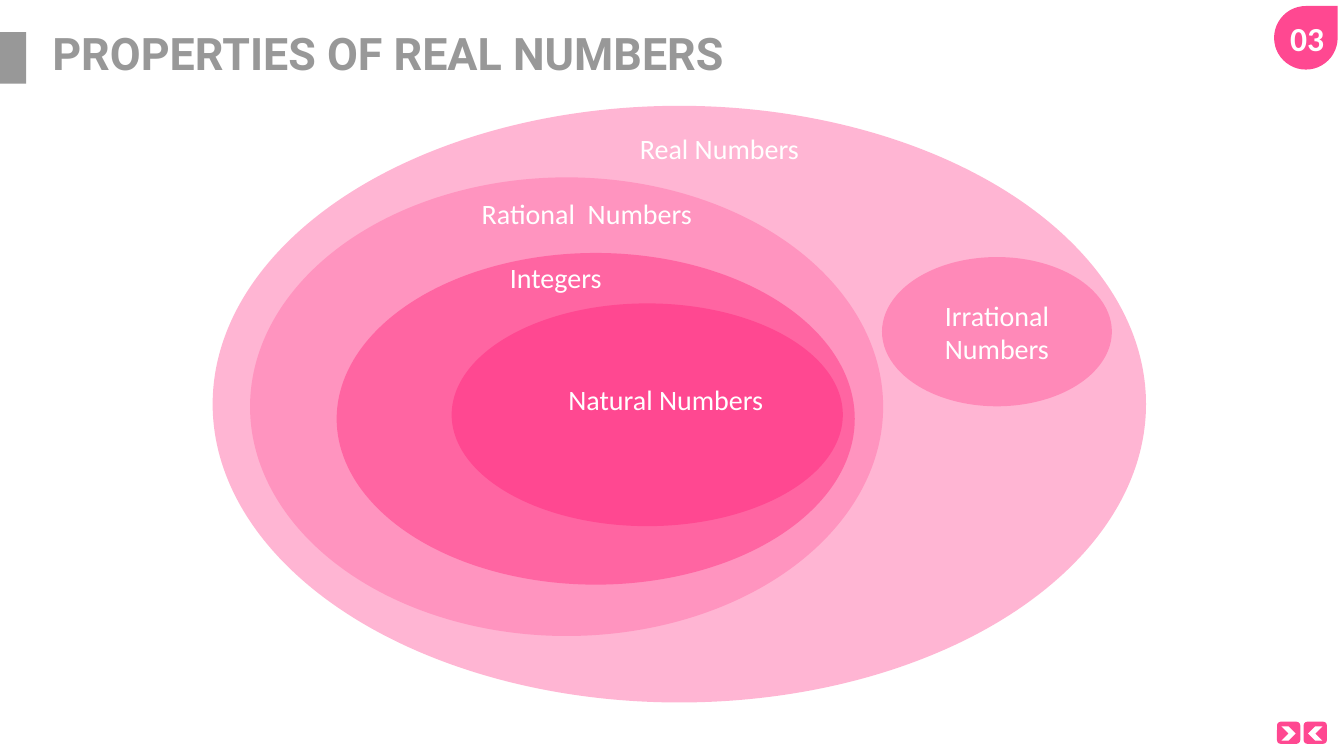
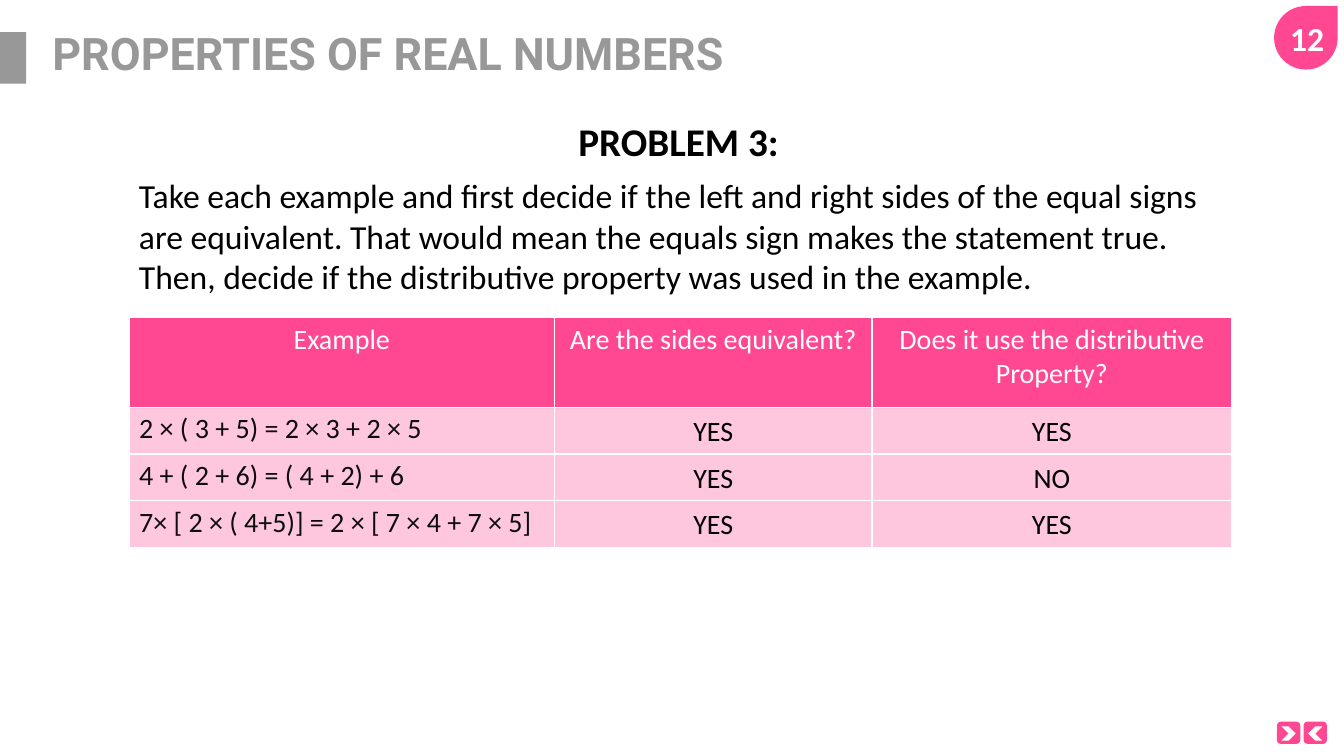
from lxml import etree
from pptx import Presentation
from pptx.dml.color import RGBColor
from pptx.enum import shapes, text
from pptx.oxml.ns import qn
from pptx.util import Pt

PINK, GREY, WHITE, BLACK, INK = "FF4891", "989898", "FFFFFF", "000000", "0D0D0D"
SHAPE = shapes.MSO_SHAPE
LEFT, CENTER = text.PP_ALIGN.LEFT, text.PP_ALIGN.CENTER
TITLE = "PROPERTIES OF REAL NUMBERS"

TITLE_FONT = {"name": "Roboto", "size": Pt(32), "bold": True}
NUMBER_FONT = {"name": "Calibri", "size": Pt(24), "bold": True}
HEADING_FONT = {"name": "Calibri", "size": Pt(28), "bold": True}
BODY_FONT = {"name": "Calibri", "size": Pt(24), "bold": False}
LABEL_FONT = {"name": "Calibri", "size": Pt(20), "bold": False}

LABEL_HEIGHT = 31.7
CONTENT_LEFT, CONTENT_WIDTH = 92.2, 787.7


def set_values(target, values):
    for name, value in values.items():
        setattr(target, name, value)


def points(*lengths):
    return [Pt(length) for length in lengths]


def paint(fill, properties, colour, opacity=100):
    """Fill solidly; properties is the XML element that holds the fill."""
    fill.solid()
    fill.fore_color.rgb = RGBColor.from_string(colour)
    if opacity < 100:
        tone = properties.find(f"{qn('a:solidFill')}/{qn('a:srgbClr')}")
        etree.SubElement(tone, qn("a:alpha"), val=str(opacity * 1000))


def write(frame, words, font, colour, **paragraph_values):
    paragraph = frame.paragraphs[0]
    set_values(paragraph, paragraph_values)
    run = paragraph.add_run()
    run.text = words
    set_values(run.font, font)
    run.font.color.rgb = RGBColor.from_string(colour)


def add_shape(collection, kind, box, colour, opacity=100):
    shape = collection.add_shape(kind, *points(*box))
    shape.shadow.inherit = False
    shape.line.fill.background()
    paint(shape.fill, shape.element.spPr, colour, opacity)
    return shape


def add_text(collection, box, words, font, colour, wrap=True):
    frame = collection.add_textbox(*points(*box)).text_frame
    frame.word_wrap = wrap
    frame.auto_size = text.MSO_AUTO_SIZE.SHAPE_TO_FIT_TEXT
    write(frame, words, font, colour)


def decorate_layout(layout, slide):
    """Draw the shared parts on a slide, then move them to its layout."""
    parts = [
        add_shape(slide.shapes, SHAPE.RECTANGLE, (0, 23, 18.7, 36.7), GREY),
        add_shape(slide.shapes, SHAPE.TEAR, (910.1, 4.3, 45.4, 45.4), PINK),
    ]
    for left, rotation in ((912.2, 0), (931.2, 180)):
        button = (left, 515.5, 16.6, 15.8)
        parts.append(add_shape(slide.shapes, SHAPE.ROUNDED_RECTANGLE, button, PINK))
        arrow = (left + 3.2, 518.9, 10.1, 10.1)
        chevron = add_shape(slide.shapes, SHAPE.CHEVRON, arrow, WHITE)
        chevron.rotation = rotation
        parts.append(chevron)
    for part in parts:
        layout.shapes.element.append(part.element)
    left, top, width, height = points(30.2, 25.2, 828, 30.2)
    set_values(layout.placeholders[0],
               {"left": left, "top": top, "width": width, "height": height})


def add_slide(presentation, layout, number):
    slide = presentation.slides.add_slide(layout)
    frame = slide.shapes.title.text_frame
    set_values(frame, {"vertical_anchor": text.MSO_ANCHOR.MIDDLE,
                       "auto_size": text.MSO_AUTO_SIZE.NONE})
    write(frame, TITLE, TITLE_FONT, GREY, alignment=LEFT, line_spacing=0.9)
    add_text(slide.shapes, (914.4, 9.4, 43.2, 36), number, NUMBER_FONT, WHITE)
    return slide


def add_number_sets(slide):
    diagram = slide.shapes.add_group_shape().shapes
    ovals = [
        ((151.9, 75.6, 666.7, 426.2), 40),
        ((178.6, 126.7, 452.2, 327.6), 30),
        ((240.5, 180.7, 370.1, 236.9), 61),
        ((322.6, 216.7, 279.4, 159.1), 100),
    ]
    for box, opacity in ovals:
        add_shape(diagram, SHAPE.OVAL, box, PINK, opacity)
    irrational = add_shape(diagram, SHAPE.OVAL, (630, 183.6, 164.2, 106.6), PINK, 40)
    frame = irrational.text_frame
    set_values(frame, {"word_wrap": True, "vertical_anchor": text.MSO_ANCHOR.MIDDLE})
    write(frame, "Irrational Numbers", LABEL_FONT, WHITE, alignment=CENTER)
    labels = [
        ("Real Numbers", 450, 90.7),
        ("Rational  Numbers", 337, 136.8),
        ("Integers", 357.1, 182.9),
        ("Natural Numbers", 398.9, 270),
    ]
    for words, left, top in labels:
        add_text(diagram, (left, top, 189.4, LABEL_HEIGHT), words, LABEL_FONT, WHITE)


def add_borders(properties):
    for side in ("lnL", "lnR", "lnT", "lnB"):
        line = etree.SubElement(properties, qn(f"a:{side}"), w=str(Pt(1)))
        fill = etree.SubElement(line, qn("a:solidFill"))
        etree.SubElement(fill, qn("a:srgbClr"), val=WHITE)


def add_answer_table(slide, rows, widths, heights):
    box = points(CONTENT_LEFT, 226.8, sum(widths), sum(heights))
    table = slide.shapes.add_table(len(rows), len(widths), *box).table
    for column, width in zip(table.columns, widths):
        column.width = Pt(width)
    for row, height in zip(table.rows, heights):
        row.height = Pt(height)
    for row_index, row in enumerate(rows):
        for column_index, words in enumerate(row):
            cell = table.cell(row_index, column_index)
            properties = cell._tc.get_or_add_tcPr()
            add_borders(properties)
            if row_index == 0:
                opacity, colour, layout = 100, WHITE, {"alignment": CENTER}
            elif column_index == 0:
                opacity, colour, layout = 30, INK, {"alignment": LEFT}
            else:
                opacity, colour = 30, BLACK
                layout = {"alignment": CENTER, "line_spacing": 1.07,
                          "space_after": Pt(8)}
            paint(cell.fill, properties, PINK, opacity)
            write(cell.text_frame, words, LABEL_FONT, colour, **layout)


def add_problem(slide):
    add_text(slide.shapes, (406.1, 80.6, 159.1, 41), "PROBLEM 3:",
             HEADING_FONT, BLACK, wrap=False)
    add_text(slide.shapes, (CONTENT_LEFT, 121.7, CONTENT_WIDTH, 94.3),
             "Take each example and first decide if the left and right sides of "
             "the equal signs are equivalent. That would mean the equals sign "
             "makes the statement true. Then, decide if the distributive "
             "property was used in the example.", BODY_FONT, BLACK)
    rows = [
        ("Example", "Are the sides equivalent?",
         "Does it use the distributive Property?"),
        ("2 × ( 3 + 5) = 2 × 3 + 2 × 5", "YES", "YES"),
        ("4 + ( 2 + 6) = ( 4 + 2) + 6", "YES", "NO"),
        ("7× [ 2 × ( 4+5)] = 2 × [ 7 × 4 + 7 × 5]", "YES", "YES"),
    ]
    add_answer_table(slide, rows, (303.9, 226.8, 257), (64.1, 33.4, 33.4, 33.4))


def main():
    presentation = Presentation()
    presentation.slide_width, presentation.slide_height = points(960, 540)
    layout = presentation.slide_layouts.get_by_name("Title Only")
    number_sets = add_slide(presentation, layout, "03")
    decorate_layout(layout, number_sets)
    add_number_sets(number_sets)
    add_problem(add_slide(presentation, layout, "12"))
    presentation.save("out.pptx")


if __name__ == "__main__":
    main()
